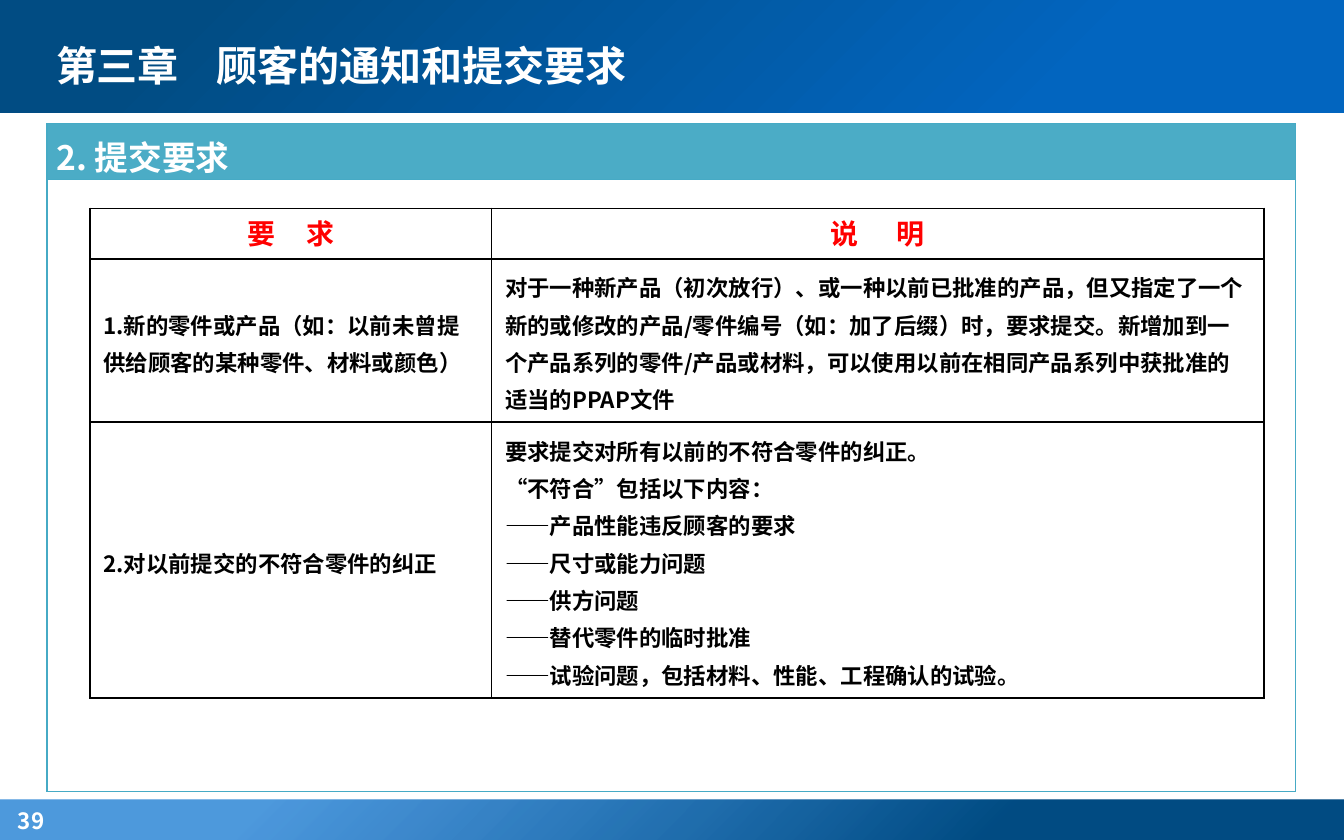
import lxml.etree
import pptx
import pptx.dml.color
import pptx.enum.shapes
import pptx.enum.text
import pptx.oxml
import pptx.oxml.ns
import pptx.util

Cm = pptx.util.Cm
Pt = pptx.util.Pt
RGBColor = pptx.dml.color.RGBColor
PP_ALIGN = pptx.enum.text.PP_ALIGN
MIDDLE = pptx.enum.text.MSO_ANCHOR.MIDDLE
TOP = pptx.enum.text.MSO_ANCHOR.TOP
qn = pptx.oxml.ns.qn

WHITE = RGBColor(0xFF, 0xFF, 0xFF)
BLACK = RGBColor(0x00, 0x00, 0x00)
RED = RGBColor(0xFF, 0x00, 0x00)
TEAL = RGBColor(0x4B, 0xAC, 0xC6)
TEAL_LINE = RGBColor(0x46, 0xAA, 0xC5)
NAVY = RGBColor(0x01, 0x4C, 0x83)
BLUE = RGBColor(0x02, 0x65, 0xBF)
LIGHT_BLUE = RGBColor(0x02, 0x6D, 0xCE)

CJK_FONT = "Noto Sans CJK SC"
HEADING_FONT = "Karla"
TITLE_FONT = "Times New Roman"

REQUIREMENTS = [
    (
        ["1.新的零件或产品（如：以前未曾提供给顾客的某种零件、材料或颜色）"],
        ["对于一种新产品（初次放行）、或一种以前已批准的产品，但又指定了一个"
         "新的或修改的产品/零件编号（如：加了后缀）时，要求提交。新增加到一个"
         "产品系列的零件/产品或材料，可以使用以前在相同产品系列中获批准的适当的PPAP文件"],
    ),
    (
        ["2.对以前提交的不符合零件的纠正"],
        ["要求提交对所有以前的不符合零件的纠正。",
         "“不符合”包括以下内容：",
         "——产品性能违反顾客的要求",
         "——尺寸或能力问题",
         "——供方问题",
         "——替代零件的临时批准",
         "——试验问题，包括材料、性能、工程确认的试验。"],
    ),
]


def add_run(paragraph, text, size, color, font=CJK_FONT, tracking=0):
    """Add one bold run, with optional tracking in points."""
    run = paragraph.add_run()
    run.text = text
    run.font.size = Pt(size)
    run.font.bold = True
    run.font.color.rgb = color
    run.font.name = font
    properties = run.font._element
    properties.set("lang", "zh-CN")
    if tracking:
        properties.set("spc", str(int(tracking * 100)))
    east_asian = lxml.etree.SubElement(properties, qn("a:ea"))
    east_asian.set("typeface", CJK_FONT)


def add_spaced_runs(paragraph, first, second, gap, size, color, font):
    """Add two words parted by one widened space."""
    add_run(paragraph, first, size, color, font)
    add_run(paragraph, " ", size, color, font, gap)
    add_run(paragraph, second, size, color, font)


def add_gradient_bar(slide, top, height, stops):
    """Add a full-width bar whose gradient spreads from its lower right corner."""
    bar = slide.shapes.add_shape(
        pptx.enum.shapes.MSO_SHAPE.RECTANGLE, 0, top, Cm(25.4), height)
    bar.shadow.inherit = False
    bar.line.fill.background()
    stop_xml = "".join(
        f'<a:gs pos="{position * 1000}"><a:srgbClr val="{color}">'
        f'<a:alpha val="{opacity * 1000}"/></a:srgbClr></a:gs>'
        for position, color, opacity in stops)
    gradient = pptx.oxml.parse_xml(
        f'<a:gradFill {pptx.oxml.ns.nsdecls("a")} rotWithShape="1">'
        f'<a:gsLst>{stop_xml}</a:gsLst><a:path path="circle">'
        '<a:fillToRect l="100000" t="100000"/></a:path></a:gradFill>')
    bar._element.spPr.find(qn("a:prstGeom")).addnext(gradient)


def add_label(slide, left, top, width, height, inset):
    """Add a text box centred vertically and return its paragraph."""
    frame = slide.shapes.add_textbox(left, top, width, height).text_frame
    frame.word_wrap = True
    frame.vertical_anchor = MIDDLE
    frame.margin_left = inset
    frame.margin_top = frame.margin_bottom = 0
    return frame.paragraphs[0]


def set_borders(cell, color, width):
    """Draw all four borders of a cell."""
    properties = cell._tc.get_or_add_tcPr()
    for side in ("lnL", "lnR", "lnT", "lnB"):
        properties.append(pptx.oxml.parse_xml(
            f'<a:{side} {pptx.oxml.ns.nsdecls("a")} w="{Pt(width)}">'
            f'<a:solidFill><a:srgbClr val="{color}"/></a:solidFill></a:{side}>'))


def add_grid(slide, left, top, widths, heights, line_color, line_width):
    """Add a bordered table without fills."""
    grid = slide.shapes.add_table(
        len(heights), len(widths), left, top, sum(widths), sum(heights)).table
    grid.first_row = grid.horz_banding = False
    for column, width in zip(grid.columns, widths):
        column.width = width
    for row, height in zip(grid.rows, heights):
        row.height = height
    for cell in grid.iter_cells():
        set_borders(cell, line_color, line_width)
        cell.fill.background()
    return grid


def fill_cell(cell, lines):
    """Write body lines into a cell."""
    cell.vertical_anchor = MIDDLE
    for index, line in enumerate(lines):
        frame = cell.text_frame
        paragraph = frame.add_paragraph() if index else frame.paragraphs[0]
        paragraph.line_spacing = Pt(20)
        add_run(paragraph, line, 12, BLACK)


def add_section_panel(slide):
    """Add the framed panel with its section heading."""
    panel = add_grid(slide, Cm(0.89), Cm(2.34), [Cm(23.6)],
                     [Cm(1.06), Cm(11.56)], TEAL_LINE, 0.75)
    heading = panel.cell(0, 0)
    heading.fill.solid()
    heading.fill.fore_color.rgb = TEAL
    heading.vertical_anchor = TOP
    heading.margin_left = heading.margin_right = Cm(0.18)
    heading.margin_top = heading.margin_bottom = 0
    paragraph = heading.text_frame.paragraphs[0]
    paragraph.line_spacing = Pt(30)
    add_run(paragraph, "2. 提交要求", 18, WHITE)


def add_requirements_table(slide):
    """Add the table of requirements and explanations."""
    table = add_grid(slide, Cm(1.7), Cm(3.94), [Cm(7.59), Cm(14.6)],
                     [Cm(0.94), Cm(3.07), Cm(5.21)], BLACK, 1)
    for column, (first, second, gap) in enumerate([("要", "求", 13), ("说", "明", 17)]):
        paragraph = table.cell(0, column).text_frame.paragraphs[0]
        paragraph.alignment = PP_ALIGN.CENTER
        paragraph.line_spacing = Pt(20)
        add_spaced_runs(paragraph, first, second, gap, 15, RED, HEADING_FONT)
    for row, texts in enumerate(REQUIREMENTS, start=1):
        for column, lines in enumerate(texts):
            fill_cell(table.cell(row, column), lines)


def main():
    """Build and save the slide."""
    deck = pptx.Presentation()
    deck.slide_width, deck.slide_height = Cm(25.4), Cm(15.88)
    slide = deck.slides.add_slide(deck.slide_layouts[6])
    add_gradient_bar(slide, Cm(15.12), Cm(0.76), [(26, NAVY, 100), (80, LIGHT_BLUE, 70)])
    add_gradient_bar(slide, 0, Cm(2.13), [(21, BLUE, 100), (86, NAVY, 100)])
    page_number = add_label(slide, 0, Cm(15.16), Cm(1.5), Cm(0.71), Cm(0.34))
    add_run(page_number, "39", 12, WHITE)
    add_section_panel(slide)
    add_requirements_table(slide)
    title = add_label(slide, Cm(0.81), Cm(0.33), Cm(16.2), Cm(1.8), Cm(0.25))
    add_spaced_runs(title, "第三章", "顾客的通知和提交要求", 15, 22, WHITE, TITLE_FONT)
    deck.save("out.pptx")


if __name__ == "__main__":
    main()
